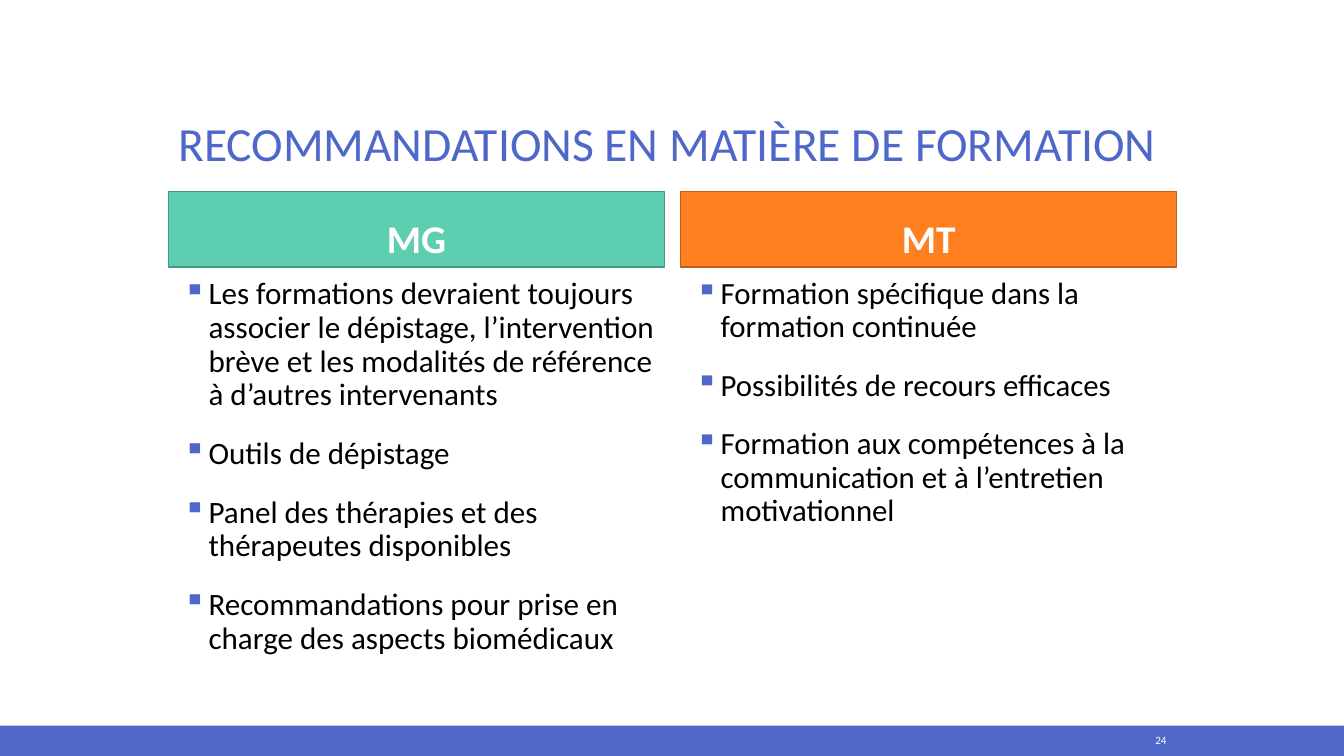
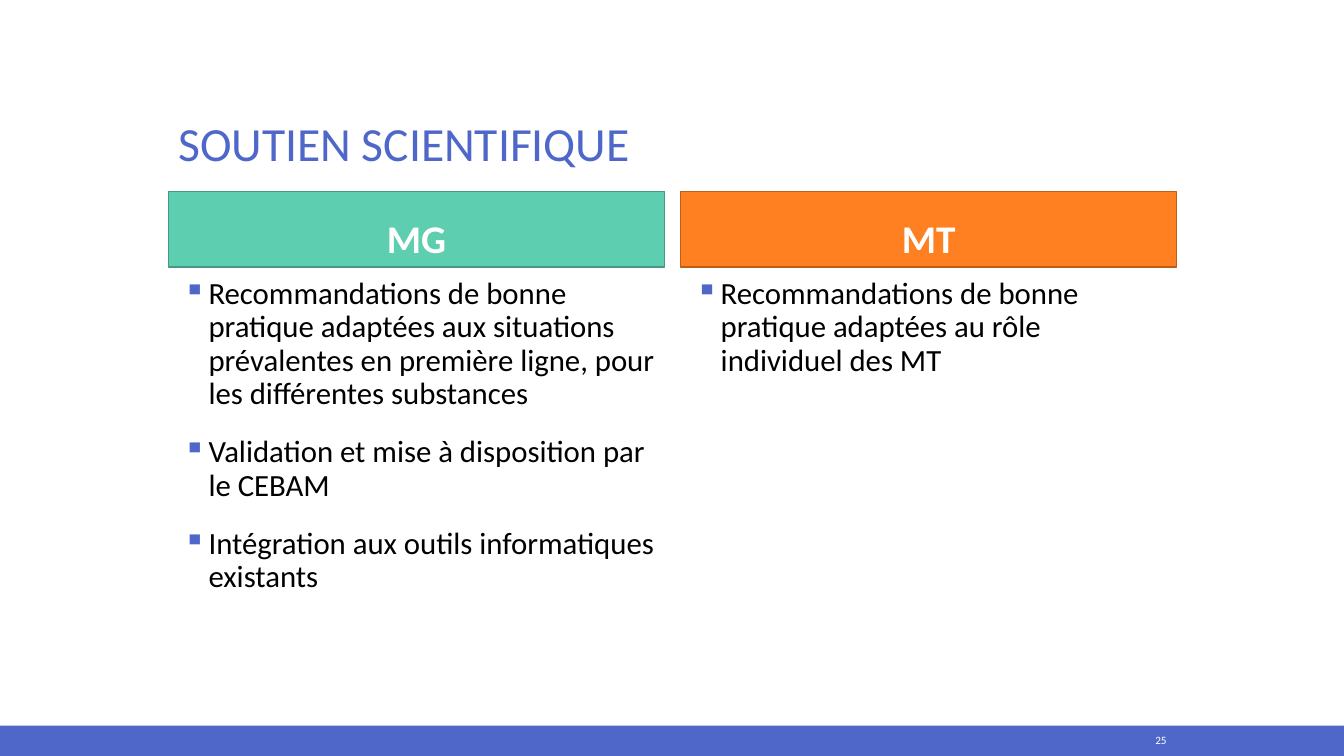
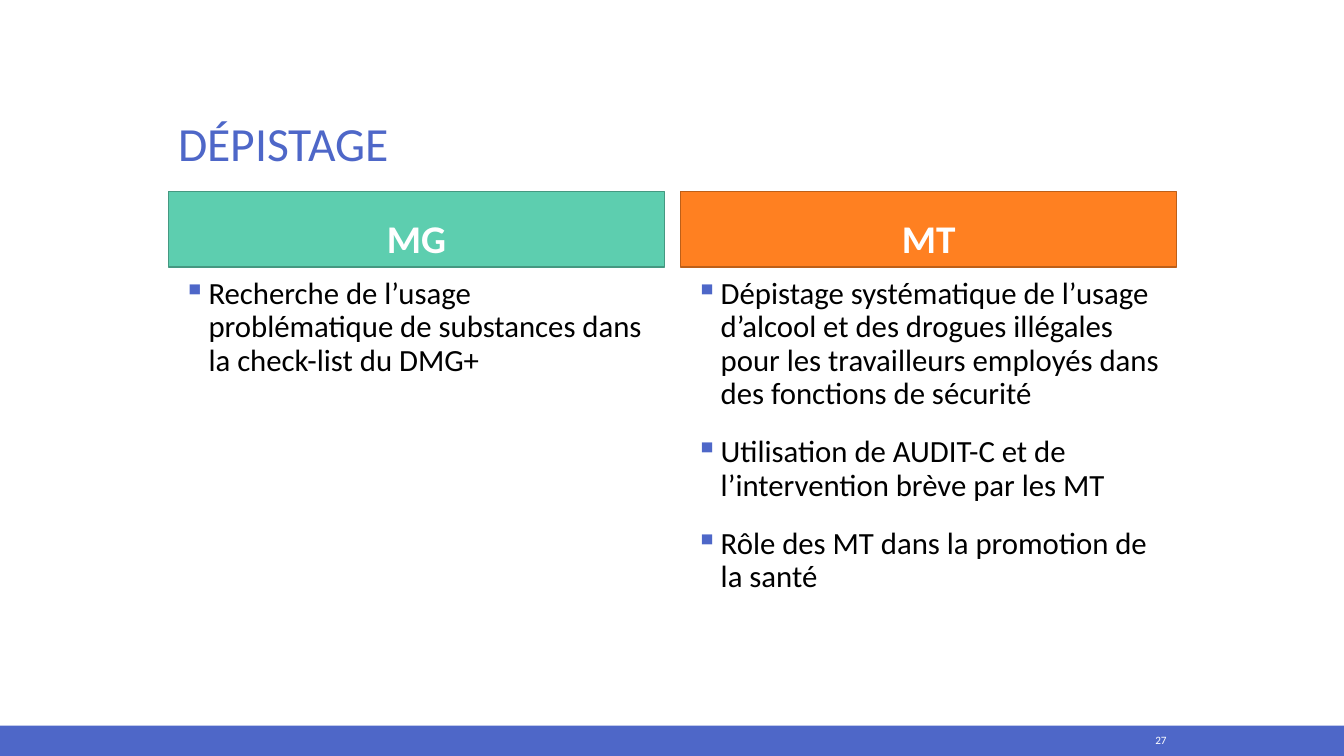
from dataclasses import dataclass

from lxml import etree
from pptx import Presentation
from pptx.dml.color import RGBColor
from pptx.enum.shapes import MSO_SHAPE
from pptx.enum.text import MSO_ANCHOR, PP_ALIGN
from pptx.oxml.ns import qn
from pptx.util import Inches, Pt

RECTANGLE = MSO_SHAPE.RECTANGLE
TOP, MIDDLE, BOTTOM = MSO_ANCHOR.TOP, MSO_ANCHOR.MIDDLE, MSO_ANCHOR.BOTTOM
LEFT, CENTER, RIGHT = PP_ALIGN.LEFT, PP_ALIGN.CENTER, PP_ALIGN.RIGHT

FONT = "Calibri"
BLUE = RGBColor(0x4E, 0x67, 0xC8)
GREEN = RGBColor(0x5D, 0xCE, 0xAF)
DARK_GREEN = RGBColor(0x45, 0x98, 0x81)
ORANGE = RGBColor(0xFF, 0x80, 0x21)
DARK_ORANGE = RGBColor(0xBD, 0x5F, 0x18)
BLACK = RGBColor(0x00, 0x00, 0x00)
WHITE = RGBColor(0xFF, 0xFF, 0xFF)

SLIDE_WIDTH, SLIDE_HEIGHT = 13.33, 7.5
MARGIN = 1.67
CONTENT_WIDTH = 10
COLUMN_GAP = 0.16
COLUMN_WIDTH = (CONTENT_WIDTH - COLUMN_GAP) / 2
COLUMN_TOP, COLUMN_HEIGHT = 1.9, 4.85
HEADER_HEIGHT, HEADER_GAP = 0.75, 0.06
FOOTER_HEIGHT = 0.3
NUMBER_WIDTH, NUMBER_HEIGHT = 0.85, 0.25
BODY_SIZE = 22

COLUMN_STYLES = [("MG", GREEN, DARK_GREEN), ("MT", ORANGE, DARK_ORANGE)]


@dataclass
class Comparison:
    number: int
    title: str
    columns: list
    sizes: tuple = (BODY_SIZE, BODY_SIZE)


COMPARISONS = [
    Comparison(
        24,
        "RECOMMANDATIONS EN MATIÈRE DE FORMATION",
        [
            [
                "Les formations devraient toujours associer le dépistage, "
                "l’intervention brève et les modalités de référence à d’autres intervenants",
                "Outils de dépistage",
                "Panel des thérapies et des thérapeutes disponibles",
                "Recommandations pour prise en charge des aspects biomédicaux",
            ],
            [
                "Formation spécifique dans la formation continuée",
                "Possibilités de recours efficaces",
                "Formation aux compétences à la communication et à l’entretien motivationnel",
            ],
        ],
        sizes=(22.2, BODY_SIZE),
    ),
    Comparison(
        25,
        "SOUTIEN SCIENTIFIQUE",
        [
            [
                "Recommandations de bonne pratique adaptées aux situations prévalentes "
                "en première ligne, pour les différentes substances",
                "Validation et mise à disposition par le CEBAM",
                "Intégration aux outils informatiques existants",
            ],
            ["Recommandations de bonne pratique adaptées au rôle individuel des MT"],
        ],
    ),
    Comparison(
        27,
        "DÉPISTAGE",
        [
            ["Recherche de l’usage problématique de substances dans la check-list du DMG+"],
            [
                "Dépistage systématique de l’usage d’alcool et des drogues illégales "
                "pour les travailleurs employés dans des fonctions de sécurité",
                "Utilisation de AUDIT-C et de l’intervention brève par les MT",
                "Rôle des MT dans la promotion de la santé",
            ],
        ],
    ),
]


def write_text(shape, lines, size, color, anchor=TOP, align=LEFT, spacing=0.9, bold=False):
    """Fill a shape with one paragraph per line and return the paragraphs."""
    text_frame = shape.text_frame
    text_frame.word_wrap = True
    text_frame.vertical_anchor = anchor
    text_frame.text = "\n".join(lines)
    for paragraph in text_frame.paragraphs:
        paragraph.alignment = align
        paragraph.line_spacing = spacing
        font = paragraph.runs[0].font
        font.name, font.size, font.bold = FONT, Pt(size), bold
        font.color.rgb = color
    return text_frame.paragraphs


def add_text_box(slide, left, top, width, height):
    return slide.shapes.add_textbox(Inches(left), Inches(top), Inches(width), Inches(height))


def add_rectangle(slide, left, top, width, height, fill, line=None):
    shape = slide.shapes.add_shape(
        RECTANGLE, Inches(left), Inches(top), Inches(width), Inches(height))
    shape.shadow.inherit = False
    shape.fill.solid()
    shape.fill.fore_color.rgb = fill
    if line is None:
        shape.line.fill.background()
    else:
        shape.line.color.rgb = line
        shape.line.width = Pt(1)
    return shape


def add_bullet(paragraph):
    paragraph.space_before = Pt(18)
    properties = paragraph._p.get_or_add_pPr()
    properties.set("marL", str(Inches(0.3)))
    properties.set("indent", str(Inches(-0.25)))
    color = etree.SubElement(properties, qn("a:buClr"))
    etree.SubElement(color, qn("a:srgbClr"), val=str(BLUE))
    etree.SubElement(properties, qn("a:buChar"), char="▪")


def add_title(slide, left, top, width, height, title):
    box = add_text_box(slide, left, top, width, height)
    write_text(box, [title], 34, BLUE, anchor=BOTTOM)


def add_column(slide, left, top, width, height, style, items, size):
    """Place a coloured header and the bulleted list below it."""
    label, fill, line = style
    header = add_rectangle(slide, left, top, width, HEADER_HEIGHT, fill, line)
    write_text(header, [label], 28, WHITE, anchor=BOTTOM, align=CENTER, bold=True)
    list_offset = HEADER_HEIGHT + HEADER_GAP
    body = add_text_box(slide, left, top + list_offset, width, height - list_offset)
    for paragraph in write_text(body, items, size, BLACK):
        add_bullet(paragraph)


def add_footer(slide, left, top, width, height, number):
    add_rectangle(slide, left, top, width, height, BLUE)
    number_left = MARGIN + CONTENT_WIDTH - NUMBER_WIDTH
    box = add_text_box(slide, number_left, top + 0.02, NUMBER_WIDTH, NUMBER_HEIGHT)
    write_text(box, [str(number)], 8, WHITE, anchor=MIDDLE, align=RIGHT, spacing=1.0)


def add_comparison_slide(presentation, comparison):
    slide = presentation.slides.add_slide(presentation.slide_layouts[6])
    add_footer(slide, 0, SLIDE_HEIGHT - FOOTER_HEIGHT, SLIDE_WIDTH, FOOTER_HEIGHT,
               comparison.number)
    add_title(slide, MARGIN, 0.5, CONTENT_WIDTH, 1.25, comparison.title)
    columns = zip(COLUMN_STYLES, comparison.columns, comparison.sizes)
    for index, (style, items, size) in enumerate(columns):
        left = MARGIN + index * (COLUMN_WIDTH + COLUMN_GAP)
        add_column(slide, left, COLUMN_TOP, COLUMN_WIDTH, COLUMN_HEIGHT, style, items, size)


def main():
    presentation = Presentation()
    presentation.slide_width = Inches(SLIDE_WIDTH)
    presentation.slide_height = Inches(SLIDE_HEIGHT)
    for comparison in COMPARISONS:
        add_comparison_slide(presentation, comparison)
    presentation.save("out.pptx")


if __name__ == "__main__":
    main()
